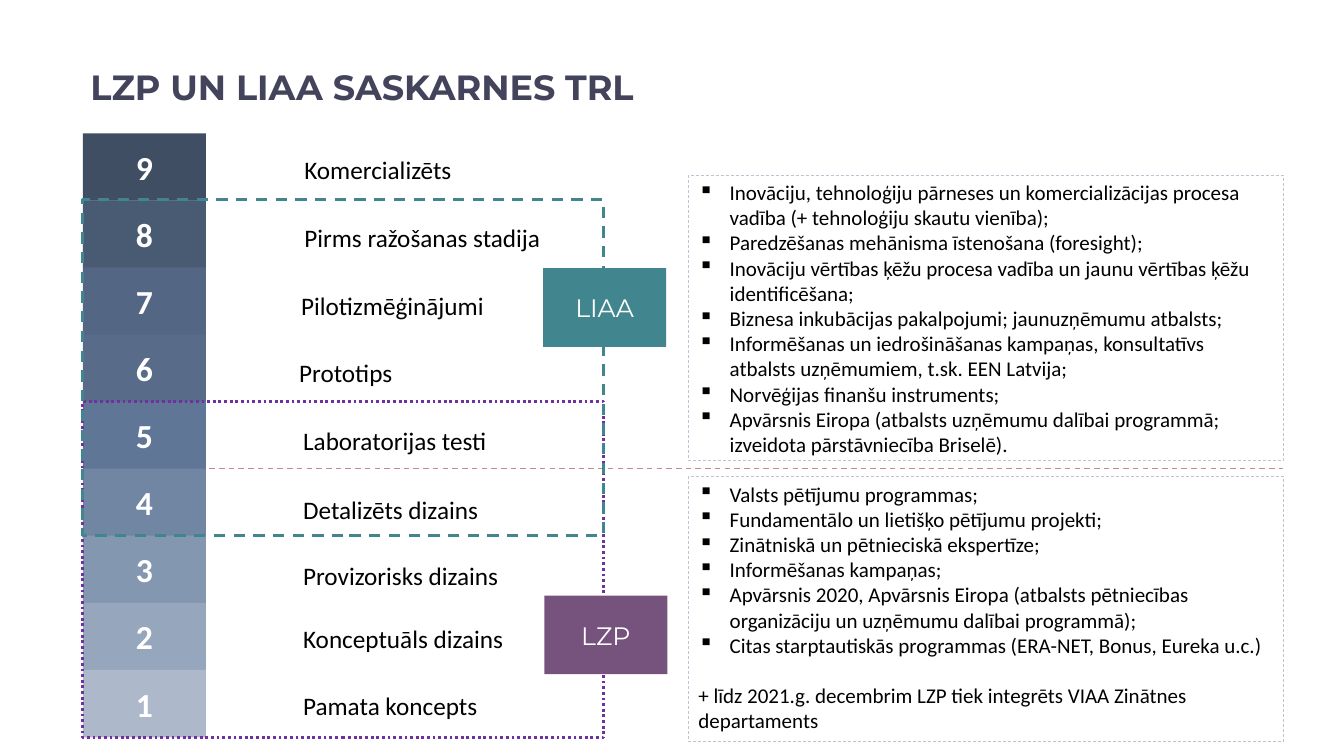
"""Build the slide on the technology readiness levels shared by LZP and LIAA."""
from pptx import Presentation
from pptx.dml.color import RGBColor
from pptx.enum.dml import MSO_LINE
from pptx.enum.shapes import MSO_CONNECTOR, MSO_SHAPE
from pptx.enum.text import MSO_ANCHOR as ANCHOR, PP_ALIGN as ALIGN
from pptx.oxml.xmlchemy import OxmlElement
from pptx.util import Cm, Pt

INK = RGBColor(0x43, 0x43, 0x5B)
BLACK = RGBColor(0x00, 0x00, 0x00)
WHITE = RGBColor(0xFF, 0xFF, 0xFF)
TEAL = RGBColor(0x41, 0x86, 0x8F)
PLUM = RGBColor(0x76, 0x53, 0x7D)
PURPLE = RGBColor(0x70, 0x30, 0xA0)
ROSE = RGBColor(0xC1, 0x8C, 0x8B)
LILAC = RGBColor(0xC3, 0xC1, 0xD1)

TITLE = "LZP UN LIAA SASKARNES TRL"
LEVELS = [
    (9, RGBColor(0x3F, 0x4E, 0x63), "Komercializēts", 7.42, 3.76),
    (8, RGBColor(0x49, 0x5A, 0x73), "Pirms ražošanas stadija", 7.42, 5.49),
    (7, RGBColor(0x53, 0x66, 0x83), "Pilotizmēģinājumi", 7.34, 7.19),
    (6, RGBColor(0x58, 0x6C, 0x8A), "Prototips", 7.29, 8.89),
    (5, RGBColor(0x60, 0x76, 0x96), "Laboratorijas testi", 7.39, 10.59),
    (4, RGBColor(0x71, 0x86, 0xA3), "Detalizēts dizains", 7.39, 12.32),
    (3, RGBColor(0x84, 0x97, 0xB0), "Provizorisks dizains", 7.39, 14.0),
    (2, RGBColor(0x96, 0xA6, 0xBC), "Konceptuāls dizains", 7.39, 15.57),
    (1, RGBColor(0xAD, 0xB9, 0xCA), "Pamata koncepts", 7.39, 17.27),
]
LIAA_TASKS = [
    "Inovāciju, tehnoloģiju pārneses un komercializācijas procesa vadība (+ tehnoloģiju skautu vienība);",
    "Paredzēšanas mehānisma īstenošana (foresight);",
    "Inovāciju vērtības ķēžu procesa vadība un jaunu vērtības ķēžu identificēšana;",
    "Biznesa inkubācijas pakalpojumi; jaunuzņēmumu atbalsts;",
    "Informēšanas un iedrošināšanas kampaņas, konsultatīvs atbalsts uzņēmumiem, t.sk. EEN Latvija;",
    "Norvēģijas finanšu instruments;",
    "Apvārsnis Eiropa (atbalsts uzņēmumu dalībai programmā; izveidota pārstāvniecība Briselē).",
]
LZP_TASKS = [
    "Valsts pētījumu programmas;",
    "Fundamentālo un lietišķo pētījumu projekti;",
    "Zinātniskā un pētnieciskā ekspertīze;",
    "Informēšanas kampaņas;",
    "Apvārsnis 2020, Apvārsnis Eiropa (atbalsts pētniecības organizāciju un uzņēmumu dalībai programmā);",
    "Citas starptautiskās programmas (ERA-NET, Bonus, Eureka u.c.)",
]
LZP_NOTE = "+ līdz 2021.g. decembrim LZP tiek integrēts VIAA Zinātnes departaments"
PANELS = [
    (12.0, 6.68, ANCHOR.TOP, LZP_TASKS, LZP_NOTE),
    (4.42, 7.19, ANCHOR.MIDDLE, LIAA_TASKS, None),
]
FRAMES = [
    (10.11, 8.48, PURPLE, MSO_LINE.ROUND_DOT),
    (5.03, 8.46, TEAL, MSO_LINE.DASH),
]
BADGES = [("LZP", 13.72, 15.01, PLUM), ("LIAA", 13.69, 6.76, TEAL)]

LEFT, TOP, PITCH = 2.09, 3.36, 1.69
CELL_WIDTH, CELL_HEIGHT = 3.1, 1.7
PANEL_LEFT, PANEL_WIDTH = 17.35, 14.99
FRAME_WIDTH = 13.13
DIVIDER_Y = 11.81
INDENT = Cm(0.79)

TITLE_FONT = {"name": "Montserrat", "size": Pt(25), "bold": True}
LABEL_FONT = {"name": "Calibri", "size": Pt(18)}
LEVEL_FONT = {"name": "Calibri", "size": Pt(24), "bold": True}
TASK_FONT = {"name": "Calibri", "size": Pt(15)}
BADGE_FONT = {"name": "Montserrat", "size": Pt(18)}


def write(paragraph, text, font, color, align=ALIGN.LEFT):
    run = paragraph.add_run()
    run.text = text
    for name, value in font.items():
        setattr(run.font, name, value)
    run.font.color.rgb = color
    paragraph.alignment = align


def add_label(slide, box, text, font, color, anchor=ANCHOR.TOP):
    frame = slide.shapes.add_textbox(*map(Cm, box)).text_frame
    frame.word_wrap = True
    frame.vertical_anchor = anchor
    write(frame.paragraphs[0], text, font, color)


def style_line(line, color, width, dash):
    for name, value in {"width": Pt(width), "dash_style": dash}.items():
        setattr(line, name, value)
    line.color.rgb = color


def add_block(slide, box, fill=None, outline=None):
    shape = slide.shapes.add_shape(MSO_SHAPE.RECTANGLE, *map(Cm, box))
    shape.shadow.inherit = False
    if fill is None:
        shape.fill.background()
    else:
        shape.fill.solid()
        shape.fill.fore_color.rgb = fill
    if outline is None:
        shape.line.fill.background()
    else:
        style_line(shape.line, *outline)
    return shape


def add_filled_block(slide, box, fill, text, font):
    frame = add_block(slide, box, fill).text_frame
    frame.vertical_anchor = ANCHOR.MIDDLE
    write(frame.paragraphs[0], text, font, WHITE, ALIGN.CENTER)


def add_bullet(paragraph):
    properties = paragraph._p.get_or_add_pPr()
    properties.set("marL", str(INDENT))
    properties.set("indent", str(-INDENT))
    bullet = OxmlElement("a:buChar")
    bullet.set("char", "▪")
    properties.append(bullet)


def add_panel(slide, top, height, anchor, tasks, note):
    box = (PANEL_LEFT, top, PANEL_WIDTH, height)
    frame = add_block(slide, box, outline=(LILAC, 0.5, MSO_LINE.DASH)).text_frame
    frame.word_wrap = True
    frame.vertical_anchor = anchor
    for index, task in enumerate(tasks):
        paragraph = frame.add_paragraph() if index else frame.paragraphs[0]
        write(paragraph, task, TASK_FONT, BLACK)
        add_bullet(paragraph)
    if note:
        paragraph = frame.add_paragraph()
        paragraph.space_before = Pt(18)
        write(paragraph, note, TASK_FONT, BLACK)


def add_divider(slide):
    ends = (LEFT, DIVIDER_Y, PANEL_LEFT + PANEL_WIDTH, DIVIDER_Y)
    divider = slide.shapes.add_connector(MSO_CONNECTOR.STRAIGHT, *map(Cm, ends))
    style_line(divider.line, ROSE, 1, MSO_LINE.DASH)
    divider._element.spPr.append(OxmlElement("a:effectLst"))


def main():
    presentation = Presentation()
    presentation.slide_width, presentation.slide_height = Cm(33.87), Cm(19.05)
    slide = presentation.slides.add_slide(presentation.slide_layouts[6])

    add_label(slide, (2.03, 1.19, 29.21, 1.98), TITLE, TITLE_FONT, INK, ANCHOR.MIDDLE)
    for _, _, label, left, top in LEVELS:
        add_label(slide, (left, top, 6.83, 1.02), label, LABEL_FONT, BLACK)
    for panel in PANELS:
        add_panel(slide, *panel)
    add_divider(slide)
    for row, (level, color, *_) in enumerate(LEVELS):
        box = (LEFT, TOP + row * PITCH, CELL_WIDTH, CELL_HEIGHT)
        add_filled_block(slide, box, color, str(level), LEVEL_FONT)
    for top, height, color, dash in FRAMES:
        add_block(slide, (LEFT, top, FRAME_WIDTH, height), outline=(color, 2, dash))
    for name, left, top, color in BADGES:
        add_filled_block(slide, (left, top, CELL_WIDTH, 1.98), color, name, BADGE_FONT)

    presentation.save("out.pptx")


if __name__ == "__main__":
    main()
